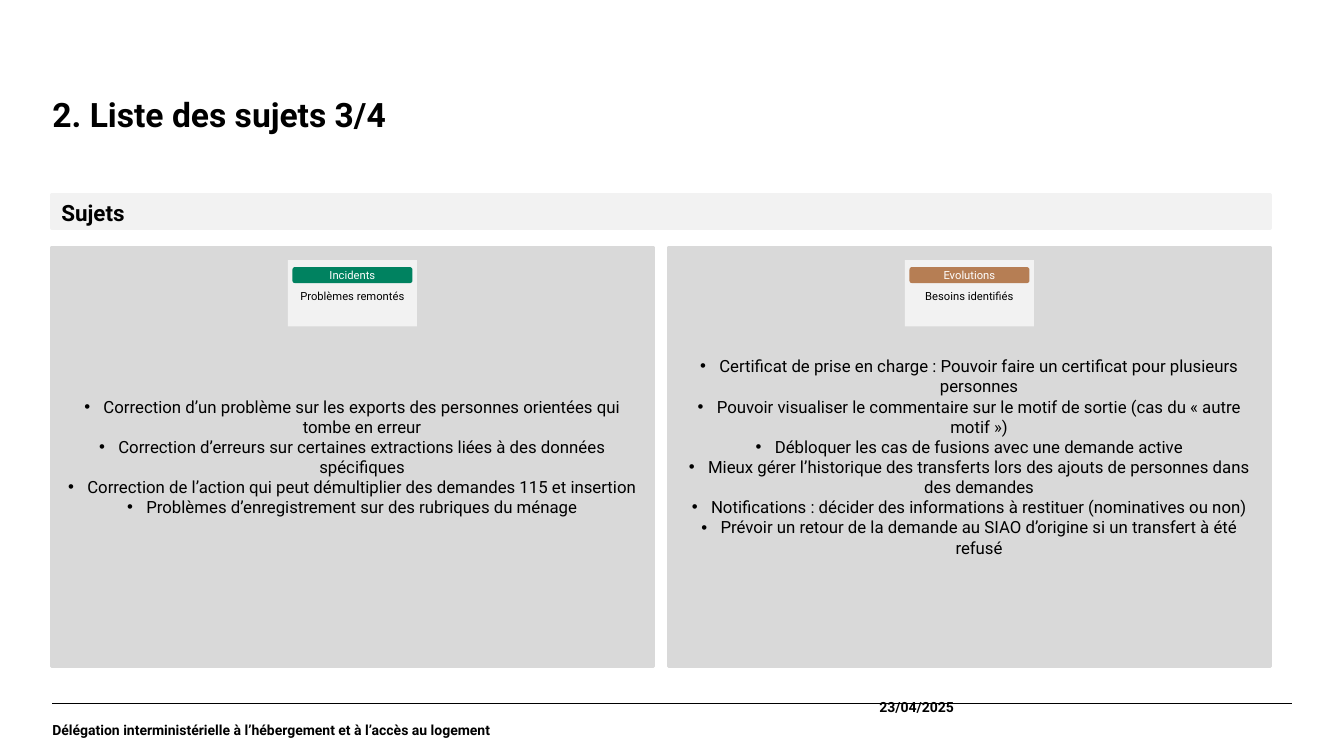
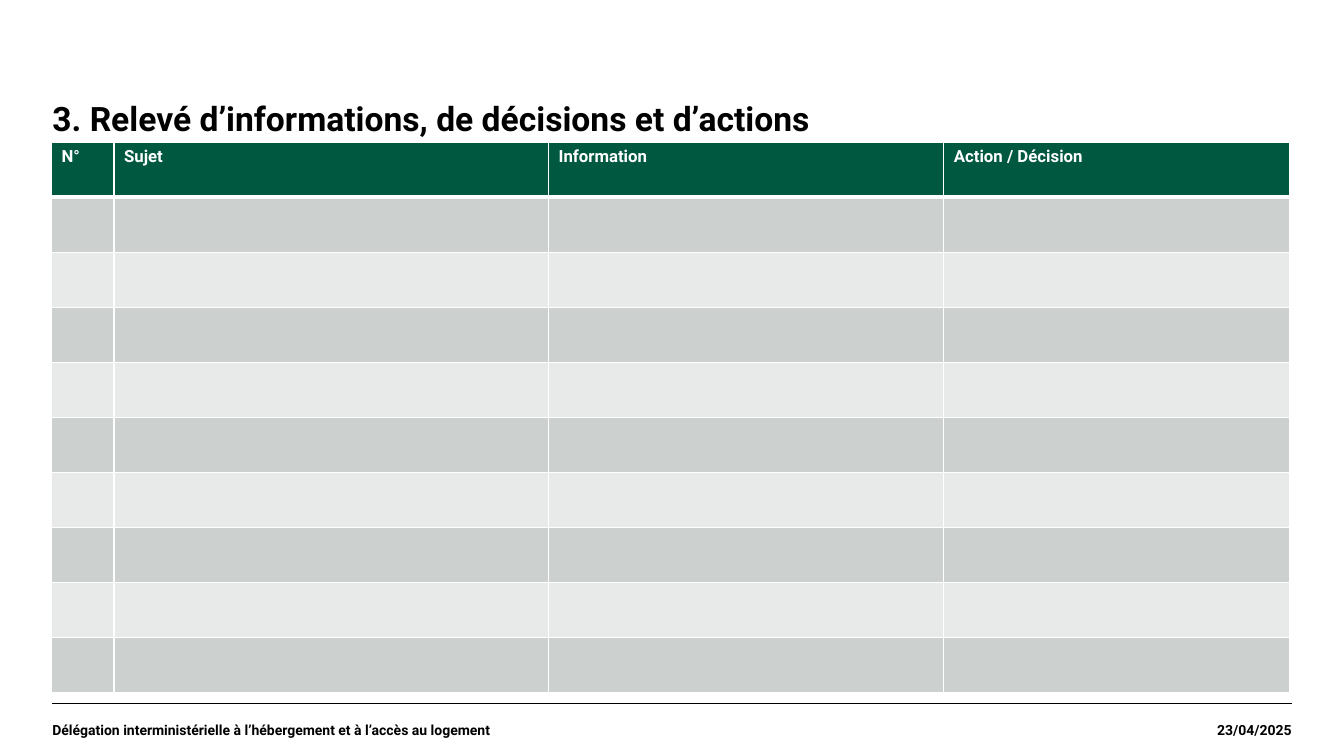
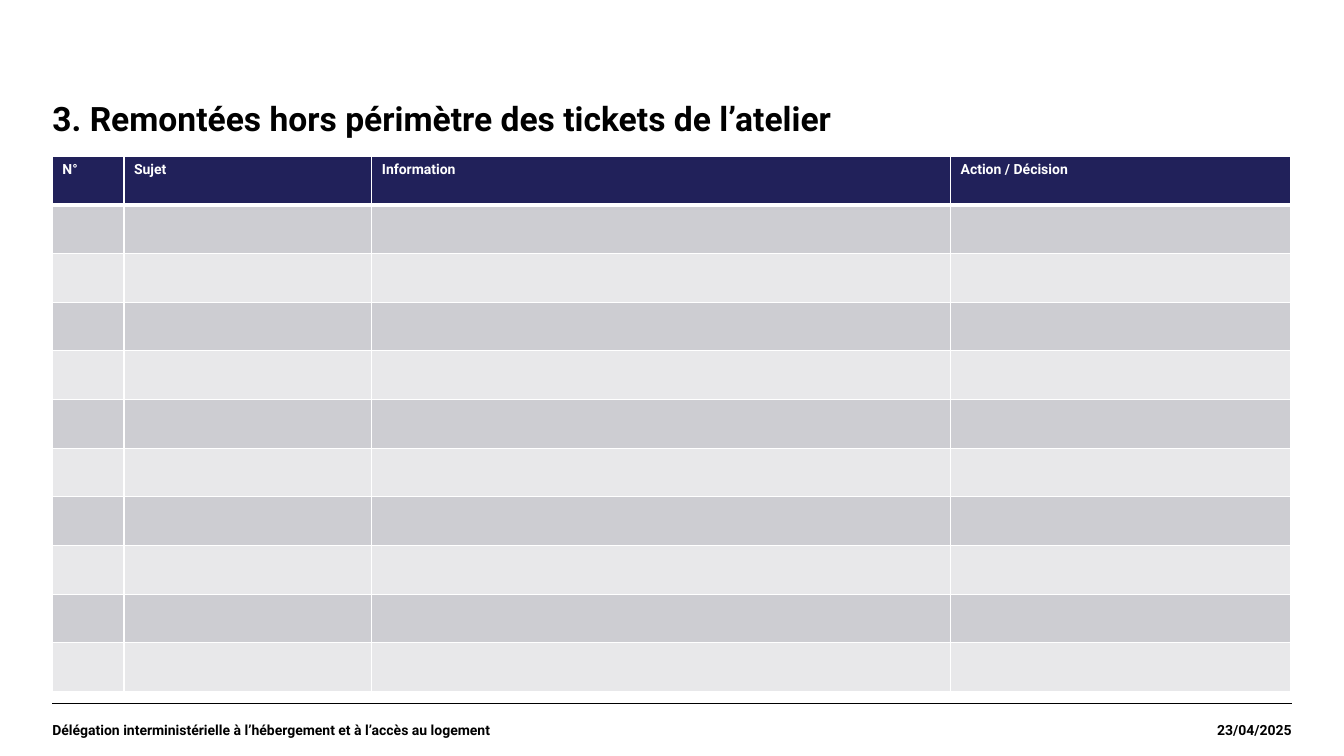
from dataclasses import dataclass
from typing import NamedTuple

from lxml.etree import SubElement as Sub
from pptx import Presentation
from pptx.dml.color import RGBColor as Rgb
from pptx.enum.shapes import MSO_CONNECTOR as Link, MSO_SHAPE as Form
from pptx.enum.text import MSO_ANCHOR as Anchor, MSO_AUTO_SIZE as Fit, PP_ALIGN as Align
from pptx.oxml.ns import qn
from pptx.util import Emu, Inches, Pt

WIDE, HIGH = Inches(13.33), Inches(7.5)


@dataclass(frozen=True)
class Theme:
    font: str = "Roboto"
    ink: str = "000000"
    white: str = "FFFFFF"
    pale: str = "F2F2F2"
    grey: str = "D9D9D9"
    green: str = "008260"
    brown: str = "B67E54"
    head: int = 24
    band: int = 16
    body: int = 12
    foot: int = 10
    tag: int = 8


class Box(NamedTuple):
    """Place and size, in percent of the slide's width and height."""
    x: float
    y: float
    w: float
    h: float

    def emu(self) -> tuple[Emu, Emu, Emu, Emu]:
        return across(self.x), down(self.y), across(self.w), down(self.h)


class Topic(NamedTuple):
    tag: str
    fill: str
    label: str
    points: list[str]


class Grid(NamedTuple):
    title: str
    box: Box
    cols: list[float]  # percent of the table's width
    rows: int
    size: int
    head: str
    bands: tuple[str, str]


T = Theme()
LEFT, RIGHT, BASE = 3.9, 96.1, 93.07
DATE_W, FOOT_H = 12.83, 6.93
BAR = Box(3.83, 25.73, 90.7, 4.53)
GAP = 1.12
DATE = "23/04/2025"
OWNER = "Délégation interministérielle à l’hébergement et à l’accès au logement"
HEADS = ["N°", "Sujet", "Information", "Action / Décision"]

TOPICS = [
    Topic("Incidents", T.green, "Problèmes remontés", [
        "Correction d’un problème sur les exports des personnes orientées qui tombe en erreur",
        "Correction d’erreurs sur certaines extractions liées à des données spécifiques",
        "Correction de l’action qui peut démultiplier des demandes 115 et insertion",
        "Problèmes d’enregistrement sur des rubriques du ménage",
    ]),
    Topic("Evolutions", T.brown, "Besoins identifiés", [
        "Certificat de prise en charge : Pouvoir faire un certificat pour plusieurs personnes",
        "Pouvoir visualiser le commentaire sur le motif de sortie (cas du « autre motif »)",
        "Débloquer les cas de fusions avec une demande active",
        "Mieux gérer l’historique des transferts lors des ajouts de personnes dans des demandes",
        "Notifications : décider des informations à restituer (nominatives ou non)",
        "Prévoir un retour de la demande au SIAO d’origine si un transfert à été refusé",
    ]),
]

GRIDS = [
    Grid("3. Relevé d’informations, de décisions et d’actions",
         Box(3.83, 18.8, 92.12, 72.8), [5.05, 35.1, 31.92, 27.93],
         10, T.body, "005841", ("CCD1CF", "E7EAE9")),
    Grid("3. Remontées hors périmètre des tickets de l’atelier",
         Box(LEFT, 20.67, 92.12, 70.8), [5.78, 20.03, 46.74, 27.45],
         11, T.foot, "21215A", ("CDCDD2", "E8E8EA")),
]


def across(share: float) -> Emu:
    return Emu(round(WIDE * share / 100))


def down(share: float) -> Emu:
    return Emu(round(HIGH * share / 100))


# Text
def bullet(para) -> None:
    props = para._p.get_or_add_pPr()
    props.set("marL", str(Inches(0.19)))
    props.set("indent", str(-Inches(0.19)))
    Sub(props, qn("a:buFont"), typeface="Arial")
    Sub(props, qn("a:buChar"), char="•")


def write(frame, lines: list[str], size: int, color: str = T.ink, bold: bool = False,
          align=Align.LEFT, anchor=Anchor.TOP, bare: bool = False, dots: bool = False) -> None:
    frame.text = "\n".join(lines)
    frame.word_wrap = True
    frame.vertical_anchor = anchor
    if bare:
        frame.margin_left = frame.margin_right = frame.margin_top = frame.margin_bottom = 0
    for para in frame.paragraphs:
        para.alignment = align
        if dots:
            bullet(para)
        for run in para.runs:
            style(run, size, color, bold)


def style(run, size: int, color: str, bold: bool) -> None:
    run.font.name = T.font
    run.font.size = Pt(size)
    run.font.bold = bold
    run.font.color.rgb = Rgb.from_string(color)


# Shapes
def block(slide, box: Box, fill: str, edge: bool = False, form=Form.RECTANGLE):
    shape = slide.shapes.add_shape(form, *box.emu())
    shape.shadow.inherit = False
    shape.fill.solid()
    shape.fill.fore_color.rgb = Rgb.from_string(fill)
    if edge:
        shape.line.color.rgb = Rgb.from_string(fill)
        shape.line.width = Pt(2)
    else:
        shape.line.fill.background()
    return shape


def note(slide, box: Box, text: str, size: int, **look) -> None:
    write(slide.shapes.add_textbox(*box.emu()).text_frame, [text], size, **look)


# Title, rule and footer of every slide
def start(deck, title: str, top: float = 13.6, date: Box | None = None):
    slide = deck.slides.add_slide(deck.slide_layouts[5])
    rule = slide.shapes.add_connector(
        Link.STRAIGHT, across(LEFT), down(BASE), across(RIGHT), down(BASE))
    rule.line.color.rgb = Rgb.from_string(T.ink)
    rule.line.width = Pt(0.8)
    Sub(rule._element.spPr, qn("a:effectLst"))

    head = slide.shapes.title
    head.left, head.top, head.width, head.height = Box(LEFT, top, 92.12, 14).emu()
    write(head.text_frame, [title], T.head, bold=True, bare=True)
    head.text_frame.auto_size = Fit.NONE
    head.text_frame.paragraphs[0].line_spacing = 0.9

    date = date or Box(RIGHT - DATE_W, BASE, DATE_W, FOOT_H)
    look = dict(bold=True, anchor=Anchor.MIDDLE, bare=True)
    note(slide, date, DATE, T.foot, align=Align.RIGHT, **look)
    note(slide, Box(LEFT, BASE, 64.6, FOOT_H), OWNER, T.foot, **look)
    return slide


# One panel with its tag card
def panel(slide, box: Box, topic: Topic) -> None:
    mid = dict(align=Align.CENTER, anchor=Anchor.MIDDLE)
    area = block(slide, box, T.grey, edge=True)
    write(area.text_frame, topic.points, T.body, dots=True, **mid)

    def inner(y: float, w: float, h: float) -> Box:
        return Box(box.x + (box.w - w) / 2, y, w, h)

    block(slide, inner(34.4, 9.6, 8.8), T.pale)
    pill = block(slide, inner(35.33, 8.93, 2.13), topic.fill, form=Form.ROUNDED_RECTANGLE)
    write(pill.text_frame, [topic.tag], T.tag, T.white, **mid)
    note(slide, inner(37.6, 9.6, 4.93), topic.label, T.tag, align=Align.CENTER)


def topics(deck) -> None:
    slide = start(deck, "2. Liste des sujets 3/4", 13.07, Box(58.14, 90, DATE_W, FOOT_H))
    band = block(slide, BAR, T.pale, edge=True)
    write(band.text_frame, ["Sujets"], T.band, bold=True)
    width = (BAR.w - GAP) / len(TOPICS)
    for i, topic in enumerate(TOPICS):
        panel(slide, Box(BAR.x + i * (width + GAP), 32.67, width, 55.47), topic)


# Tables
def border(cell, row: int) -> None:
    props = cell._tc.get_or_add_tcPr()
    thick = {"lnT": row == 1, "lnB": row == 0}
    for side in ("lnL", "lnR", "lnT", "lnB"):
        line = Sub(props, qn(f"a:{side}"), w=str(Pt(3 if thick.get(side) else 1)))
        Sub(Sub(line, qn("a:solidFill")), qn("a:srgbClr"), val=T.white)


def table(deck, grid: Grid) -> None:
    slide = start(deck, grid.title)
    chart = slide.shapes.add_table(grid.rows, len(HEADS), *grid.box.emu()).table
    chart.horz_banding = False
    for col, share in zip(chart.columns, grid.cols):
        col.width = across(grid.box.w * share / 100)
    for r, row in enumerate(chart.rows):
        row.height = down(grid.box.h / grid.rows)
        for cell in row.cells:
            border(cell, r)
            cell.fill.solid()
            fill = grid.bands[(r - 1) % 2] if r else grid.head
            cell.fill.fore_color.rgb = Rgb.from_string(fill)
    for cell, text in zip(chart.rows[0].cells, HEADS):
        cell.text_frame.text = text
        style(cell.text_frame.paragraphs[0].runs[0], grid.size, T.white, True)


def main() -> None:
    deck = Presentation()
    deck.slide_width, deck.slide_height = WIDE, HIGH
    topics(deck)
    for grid in GRIDS:
        table(deck, grid)
    deck.save("out.pptx")


if __name__ == "__main__":
    main()
